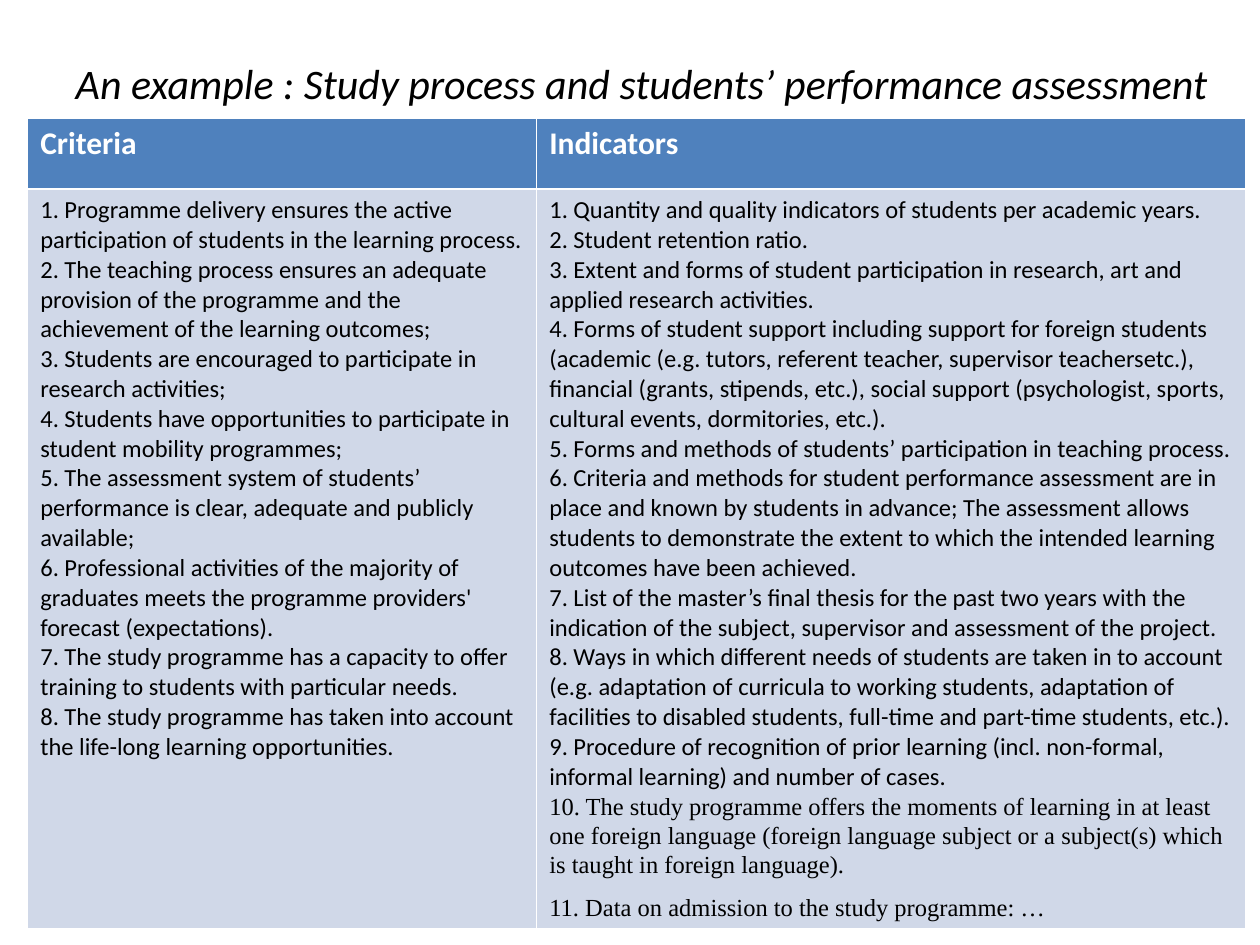
import pptx
import pptx.util
from pptx.dml.color import RGBColor
from pptx.enum.text import MSO_ANCHOR, MSO_AUTO_SIZE, PP_ALIGN
from pptx.util import Inches, Pt

COLORS = {"header": "4F81BD", "body": "D0D8E8", "light": "FFFFFF", "dark": "000000"}

TITLE = "An example : Study process and students’ performance assessment "
HEADERS = ["Criteria", "Indicators"]
CRITERIA = [
    "1. Programme delivery ensures the active participation of students in the learning process.",
    "2. The teaching process ensures an adequate provision of the programme and the "
    "achievement of the learning outcomes;",
    "3. Students are encouraged to participate in research activities;",
    "4. Students have opportunities to participate in student mobility programmes;",
    "5. The assessment system of students’ performance is clear, adequate and publicly available;",
    "6. Professional activities of the majority of graduates meets the programme providers' "
    "forecast (expectations).",
    "7. The study programme has a capacity to offer training to students with particular needs.",
    "8. The study programme has taken into account the life-long learning opportunities.",
]
INDICATORS = [
    "1. Quantity and quality indicators of students per academic years.",
    "2. Student retention ratio.",
    "3. Extent and forms of student participation in research, art and applied research activities.",
    "4. Forms of student support including support for foreign students (academic (e.g. tutors, "
    "referent teacher, supervisor teachersetc.), financial (grants, stipends, etc.), social "
    "support (psychologist, sports, cultural events, dormitories, etc.).",
    "5. Forms and methods of students’ participation in teaching process.",
    "6. Criteria and methods for student performance assessment are in place and known by "
    "students in advance; The assessment allows students to demonstrate the extent to which "
    "the intended learning outcomes have been achieved.",
    "7. List of the master’s final thesis for the past two years with the indication of the "
    "subject, supervisor and assessment of the project.",
    "8. Ways in which different needs of students are taken in to account (e.g. adaptation of "
    "curricula to working students, adaptation of facilities to disabled students, full-time "
    "and part-time students, etc.).",
    "9. Procedure of recognition of prior learning (incl. non-formal, informal learning) "
    "and number of cases.",
]
ADDED_INDICATORS = [
    "10. The study programme offers the moments of learning in at least one foreign language "
    "(foreign language subject or a subject(s) which is taught in foreign language).",
    "11. Data on admission to the study programme: …",
]
COLUMN_WIDTHS = [4.04, 5.63]
ROW_HEIGHTS = [0.56, 5.87]


def format_paragraph(para, size, color, font="Calibri", bold=False, italic=False):
    for run in para.runs:
        run.font.name = font
        run.font.size = Pt(size)
        run.font.bold = bold
        run.font.italic = italic
        run.font.color.rgb = RGBColor.from_string(COLORS[color])


def fill_cell(cell, lines, fill, size, color, bold=False):
    cell.fill.solid()
    cell.fill.fore_color.rgb = RGBColor.from_string(COLORS[fill])
    cell.text_frame.text = "\n".join(lines)
    for para in cell.text_frame.paragraphs:
        format_paragraph(para, size, color, bold=bold)


def add_title(slide):
    title = slide.shapes.title
    title.left, title.top = Inches(0.37), Inches(0.19)
    title.width, title.height = Inches(9.52), Inches(0.93)
    frame = title.text_frame
    frame.text = TITLE
    frame.word_wrap = True
    frame.auto_size = MSO_AUTO_SIZE.NONE
    frame.vertical_anchor = MSO_ANCHOR.MIDDLE
    frame.paragraphs[0].alignment = PP_ALIGN.CENTER
    format_paragraph(frame.paragraphs[0], 24, "dark", italic=True)


def add_criteria_table(slide):
    table = slide.shapes.add_table(
        len(ROW_HEIGHTS), len(COLUMN_WIDTHS), Inches(0.22), Inches(0.94),
        Inches(sum(COLUMN_WIDTHS)), Inches(sum(ROW_HEIGHTS))).table
    for column, width in zip(table.columns, COLUMN_WIDTHS):
        column.width = Inches(width)
    for row, height in zip(table.rows, ROW_HEIGHTS):
        row.height = Inches(height)

    bodies = [CRITERIA, INDICATORS + ADDED_INDICATORS]
    for index, (header, body) in enumerate(zip(HEADERS, bodies)):
        fill_cell(table.cell(0, index), [header], "header", 18, "light", bold=True)
        fill_cell(table.cell(1, index), body, "body", 14, "dark")

    indicator_paragraphs = table.cell(1, 1).text_frame.paragraphs
    for para in indicator_paragraphs[len(INDICATORS):]:
        para.line_spacing = 1.07
        para.space_after = Pt(8)
        format_paragraph(para, 14, "dark", font="Times New Roman")


def main():
    deck = pptx.Presentation()
    deck.slide_width, deck.slide_height = Inches(10), Inches(7.5)
    slide = deck.slides.add_slide(deck.slide_layouts.get_by_name("Title Only"))
    add_title(slide)
    add_criteria_table(slide)
    deck.save("out.pptx")


if __name__ == "__main__":
    main()
